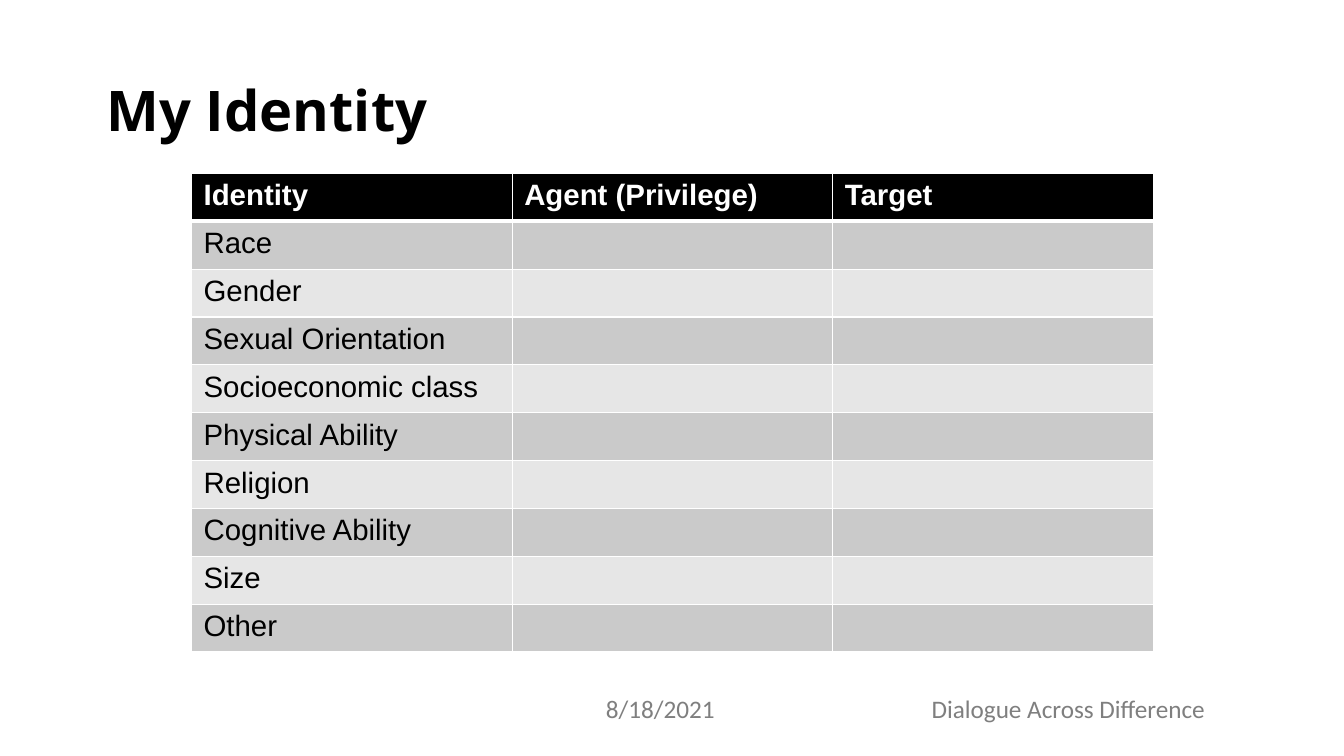
from dataclasses import dataclass

from lxml import etree
from pptx import Presentation
from pptx.dml.color import RGBColor
from pptx.enum.text import MSO_ANCHOR as Anchor, PP_ALIGN as Align
from pptx.oxml.ns import qn
from pptx.util import Inches, Pt


@dataclass(frozen=True)
class Theme:
    black: str = "000000"
    white: str = "FFFFFF"
    grey: str = "7F7F7F"
    dark_band: str = "CACACA"
    light_band: str = "E6E6E6"
    title_font: str = "Open Sans"
    table_font: str = "Arial"
    footer_font: str = "Calibri"
    title_size: int = 40
    table_size: int = 21
    footer_size: int = 18


THEME = Theme()
HEADINGS = ["Identity", "Agent (Privilege)", "Target"]
IDENTITIES = [
    "Race", "Gender", "Sexual Orientation", "Socioeconomic class",
    "Physical Ability", "Religion", "Cognitive Ability", "Size", "Other",
]


def style_font(font, name, size, color, bold=False):
    font.name = name
    font.size = Pt(size)
    font.bold = bold
    font.color.rgb = RGBColor.from_string(color)


def add_title(slide, text, left, top, width, height):
    title = slide.shapes.title
    title.left, title.top = Inches(left), Inches(top)
    title.width, title.height = Inches(width), Inches(height)
    frame = title.text_frame
    frame.text = text
    frame.word_wrap = True
    frame.vertical_anchor = Anchor.BOTTOM
    paragraph = frame.paragraphs[0]
    paragraph.alignment = Align.LEFT
    paragraph.line_spacing = 0.9
    style_font(paragraph.runs[0].font, THEME.title_font, THEME.title_size,
               THEME.black, bold=True)


def add_footer(slide, text, left, top, width, height, alignment, anchor):
    box = slide.shapes.add_textbox(
        Inches(left), Inches(top), Inches(width), Inches(height))
    frame = box.text_frame
    frame.text = text
    frame.word_wrap = True
    frame.vertical_anchor = anchor
    paragraph = frame.paragraphs[0]
    paragraph.alignment = alignment
    style_font(paragraph.runs[0].font, THEME.footer_font, THEME.footer_size,
               THEME.grey)


def set_borders(cell, widths):
    """Draw white cell borders; widths maps L, R, T and B to points."""
    properties = cell._tc.get_or_add_tcPr()
    for side, width in widths.items():
        line = etree.SubElement(properties, qn(f"a:ln{side}"), w=str(Pt(width)))
        fill = etree.SubElement(line, qn("a:solidFill"))
        etree.SubElement(fill, qn("a:srgbClr"), val=THEME.white)


def format_cell(cell, row):
    header = row == 0
    set_borders(cell, {"L": 1, "R": 1, "T": 3 if row == 1 else 1,
                       "B": 3 if header else 1})
    band = THEME.dark_band if row % 2 else THEME.light_band
    cell.fill.solid()
    cell.fill.fore_color.rgb = RGBColor.from_string(
        THEME.black if header else band)
    cell.margin_left = cell.margin_right = Inches(0.12)
    cell.margin_top = cell.margin_bottom = Inches(0.06)
    style_font(cell.text_frame.paragraphs[0].font, THEME.table_font,
               THEME.table_size, THEME.white if header else THEME.black,
               bold=header)
    for run in cell.text_frame.paragraphs[0].runs:
        style_font(run.font, THEME.table_font, THEME.table_size,
                   THEME.white if header else THEME.black, bold=header)


def add_identity_table(slide, left, top, width, height):
    rows = [HEADINGS] + [[identity, "", ""] for identity in IDENTITIES]
    table = slide.shapes.add_table(
        len(rows), len(HEADINGS), Inches(left), Inches(top),
        Inches(width), Inches(height)).table
    for row, texts in enumerate(rows):
        for column, text in enumerate(texts):
            cell = table.cell(row, column)
            cell.text = text
            format_cell(cell, row)


def main():
    presentation = Presentation()
    presentation.slide_width = Inches(13.33)
    presentation.slide_height = Inches(7.5)
    title_only = presentation.slide_layouts[5]
    slide = presentation.slides.add_slide(title_only)
    add_title(slide, "My Identity", 0.96, 0.67, 11.18, 0.8)
    add_footer(slide, "Dialogue Across Difference", 9.05, 6.83, 3, 0.4,
               Align.RIGHT, Anchor.TOP)
    add_footer(slide, "8/18/2021", 5.05, 6.83, 3, 0.4,
               Align.CENTER, Anchor.MIDDLE)
    add_identity_table(slide, 1.9, 1.72, 9.54, 4.75)
    presentation.save("out.pptx")


if __name__ == "__main__":
    main()
